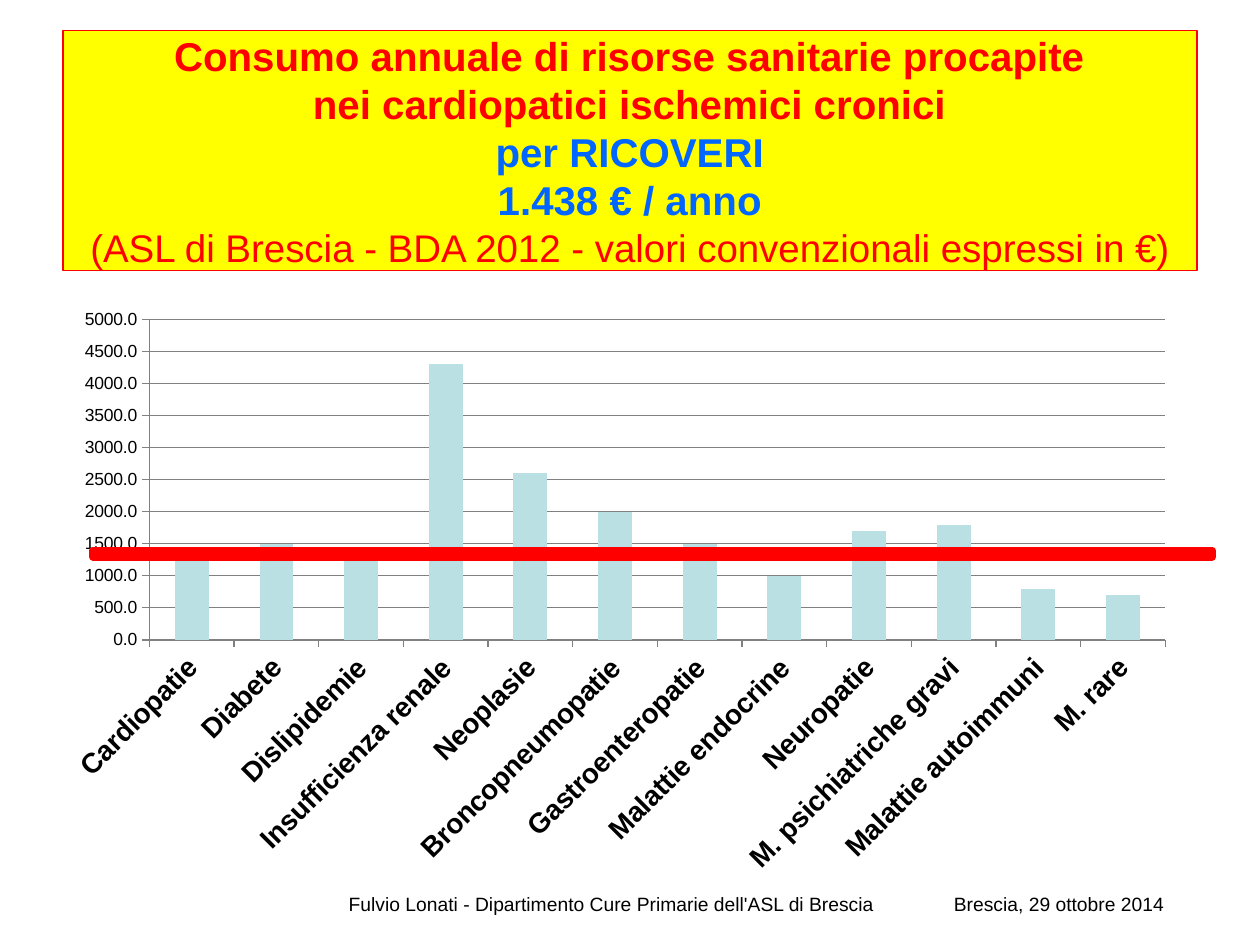
from lxml.etree import SubElement
from pptx import Presentation
from pptx.chart.data import CategoryChartData
from pptx.dml.color import RGBColor
from pptx.enum.chart import XL_CHART_TYPE, XL_TICK_MARK
from pptx.enum.shapes import MSO_SHAPE
from pptx.enum.text import MSO_ANCHOR, MSO_AUTO_SIZE, PP_ALIGN
from pptx.oxml import parse_xml
from pptx.oxml.ns import nsdecls, qn
from pptx.util import Pt

COSTS = {
    "Cardiopatie": 1400,
    "Diabete": 1500,
    "Dislipidemie": 1400,
    "Insufficienza renale": 4300,
    "Neoplasie": 2600,
    "Broncopneumopatie": 2000,
    "Gastroenteropatie": 1500,
    "Malattie endocrine": 1000,
    "Neuropatie": 1700,
    "M. psichiatriche gravi": 1800,
    "Malattie autoimmuni": 800,
    "M. rare": 700,
}


def rgb(value):
    return RGBColor.from_string(value)


def format_font(font, size=11, color="000000", bold=False):
    font.name = "Arial"
    font.size = Pt(size)
    font.bold = bold
    font.color.rgb = rgb(color)


def add_text(p, text, **style):
    r = p.add_run()
    r.text = text
    format_font(r.font, **style)


class SlideBuilder:
    red = "FF0000"
    blue = "0066FF"
    yellow = "FFFF00"
    bar = "BBE0E3"
    grid = "808080"

    def __init__(self, slide):
        self.s = slide

    def title(self, lines, left, top, width, height):
        sp = self.s.shapes.title
        sp.left, sp.top, sp.width, sp.height = map(Pt, (left, top, width, height))
        sp.fill.solid()
        sp.fill.fore_color.rgb = rgb(self.yellow)
        sp.line.color.rgb = rgb(self.red)
        sp.line.width = Pt(0.75)
        tf = sp.text_frame
        tf.word_wrap = True
        tf.auto_size = MSO_AUTO_SIZE.NONE
        tf.vertical_anchor = MSO_ANCHOR.MIDDLE
        p = tf.paragraphs[0]
        p.alignment = PP_ALIGN.CENTER
        for i, (text, style) in enumerate(lines):
            if i:
                p.add_line_break()
            add_text(p, text, **style)

    def column_chart(self, values, left, top, width, height):
        data = CategoryChartData(number_format="0.0")
        data.categories = list(values)
        data.add_series("Series 1", list(values.values()))
        chart = self.s.shapes.add_chart(
            XL_CHART_TYPE.COLUMN_CLUSTERED, *map(Pt, (left, top, width, height)), data
        ).chart
        chart.has_legend = False
        chart.has_title = False
        format_font(chart.font, size=10)
        plot = chart.plots[0]
        plot.gap_width = 150
        plot.vary_by_categories = False
        fill = plot.series[0].format.fill
        fill.solid()
        fill.fore_color.rgb = rgb(self.bar)

        cat, val = chart.category_axis, chart.value_axis
        format_font(cat.tick_labels.font, size=16, bold=True)
        cat.tick_labels._element.get_or_add_txPr().bodyPr.set("rot", "-2700000")
        format_font(val.tick_labels.font, size=10)
        val.tick_labels.number_format = "0.0"
        val.tick_labels.number_format_is_linked = False
        val.minimum_scale, val.maximum_scale, val.major_unit = 0, 5000, 500
        val.has_major_gridlines = True
        for axis in (cat, val):
            axis.major_tick_mark = XL_TICK_MARK.OUTSIDE
        for line in (cat.format.line, val.format.line, val.major_gridlines.format.line):
            line.color.rgb = rgb(self.grid)
            line.width = Pt(0.75)
        self.plot_layout(chart, x=0.074, y=0.082, w=0.909, h=0.515)

    def plot_layout(self, chart, **box):
        area = chart._chartSpace.chart.plotArea
        for old in area.findall(qn("c:layout")):
            area.remove(old)
        layout = parse_xml(f"<c:layout {nsdecls('c')}/>")
        manual = SubElement(layout, qn("c:manualLayout"))
        settings = {"layoutTarget": "inner", "xMode": "edge", "yMode": "edge", **box}
        for tag, value in settings.items():
            SubElement(manual, qn(f"c:{tag}")).set("val", str(value))
        area.insert(0, layout)

    def mean_bar(self, left, top, width, height):
        sp = self.s.shapes.add_shape(
            MSO_SHAPE.RECTANGLE, *map(Pt, (left, top, width, height))
        )
        sp.shadow.inherit = False
        sp.fill.background()
        sp.line.color.rgb = rgb(self.red)
        sp.line.width = Pt(4.5)
        SubElement(sp.line._get_or_add_ln(), qn("a:round"))

    def footer(self, author, date, tab, left, top, width, height):
        tf = self.s.shapes.add_textbox(*map(Pt, (left, top, width, height))).text_frame
        tf.word_wrap = True
        p = tf.paragraphs[0]
        tabs = SubElement(p._p.get_or_add_pPr(), qn("a:tabLst"))
        SubElement(tabs, qn("a:tab"), pos=str(Pt(tab)), algn="l")
        add_text(p, f"{author}\t{date}", size=11)


def main():
    prs = Presentation()
    prs.slide_width, prs.slide_height = Pt(720), Pt(540)
    b = SlideBuilder(prs.slides.add_slide(prs.slide_layouts[5]))
    heading = dict(size=23, color=b.red, bold=True)
    amount = dict(heading, color=b.blue)
    b.title(
        [
            ("Consumo annuale di risorse sanitarie procapite", heading),
            ("nei cardiopatici ischemici cronici", heading),
            ("per RICOVERI", amount),
            ("1.438 € / anno", amount),
            (
                "(ASL di Brescia - BDA 2012 - valori convenzionali espressi in €)",
                dict(size=22, color=b.red),
            ),
        ],
        36, 17.3, 648, 137.5,
    )
    b.column_chart(COSTS, 38.2, 153.4, 638.6, 355.7)
    b.mean_bar(53.3, 314.6, 639.4, 3.6)
    b.footer(
        "Fulvio Lonati - Dipartimento Cure Primarie dell'ASL di Brescia",
        "Brescia, 29 ottobre 2014",
        345.8, 192.2, 506.2, 491.8, 23,
    )
    prs.save("out.pptx")


if __name__ == "__main__":
    main()
